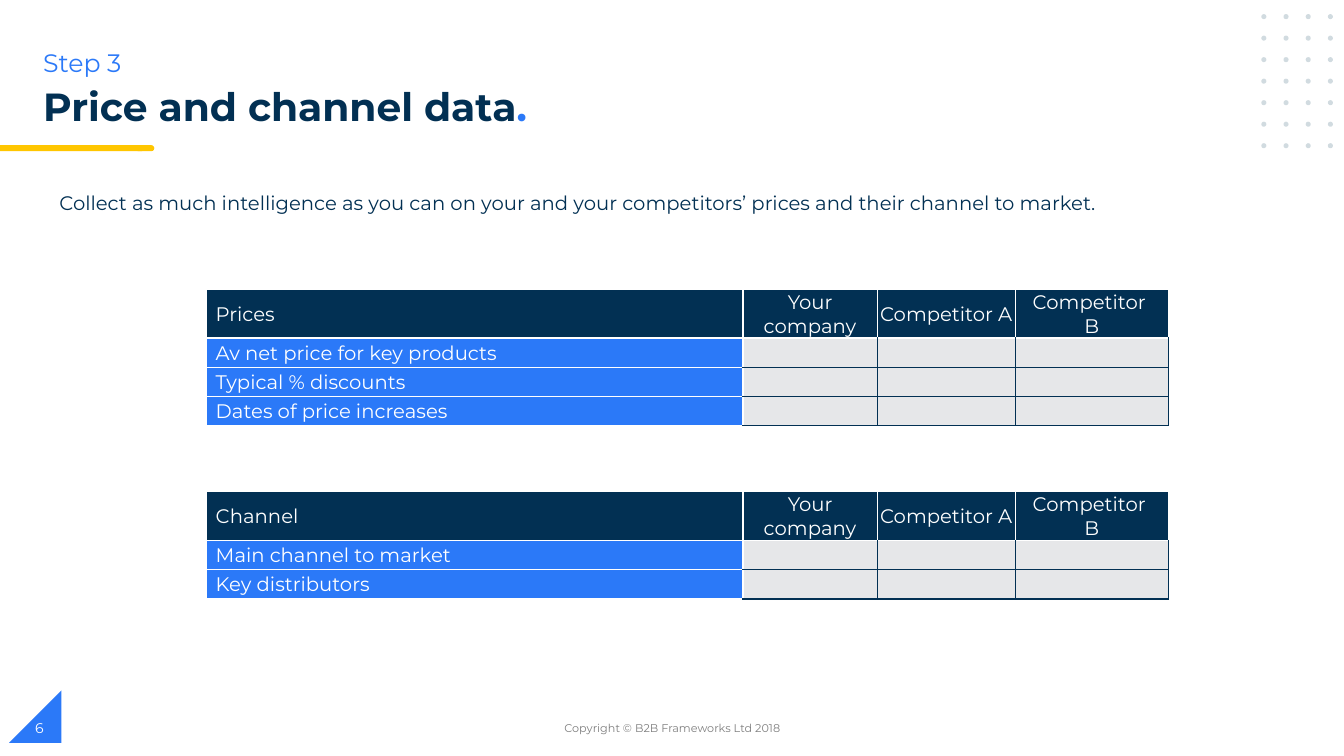
from lxml import etree
from pptx import Presentation
from pptx.dml.color import RGBColor
from pptx.enum.shapes import MSO_SHAPE
from pptx.enum.text import MSO_ANCHOR, PP_ALIGN
from pptx.oxml.ns import qn
from pptx.util import Inches, Pt

TRIANGLE = MSO_SHAPE.RIGHT_TRIANGLE
TERMINATOR = MSO_SHAPE.FLOWCHART_TERMINATOR
RECTANGLE = MSO_SHAPE.RECTANGLE
OVAL = MSO_SHAPE.OVAL
TOP, MIDDLE = MSO_ANCHOR.TOP, MSO_ANCHOR.MIDDLE
LEFT, CENTER = PP_ALIGN.LEFT, PP_ALIGN.CENTER

NAVY, BLUE, YELLOW = "023053", "2B79F8", "FFC600"
WHITE, PALE, DOT, GREY = "FFFFFF", "E6E7E9", "D1DBE0", "7F7F7F"
FONT = "Montserrat"


def rgb(color):
    return RGBColor.from_string(color)


def format_run(run, size, color, bold=False):
    for name, value in {"name": FONT, "size": Pt(size), "bold": bold}.items():
        setattr(run.font, name, value)
    run.font.color.rgb = rgb(color)


presentation = Presentation()
presentation.slide_width = Inches(13.33)
presentation.slide_height = Inches(7.5)
slide = presentation.slides.add_slide(presentation.slide_layouts[6])

# Corner triangle, title underline and dot grid
decorations = [
    (TRIANGLE, 0.09, 6.85, 0.52, 0.52, BLUE),
    (TERMINATOR, 1.34, 1.44, 0.19, 0.06, YELLOW),
    (RECTANGLE, 0, 1.44, 1.41, 0.06, YELLOW),
]
for row in range(7):
    for column in range(4):
        decorations.append((OVAL, 12.51 + 0.22 * column, 0.14 + 0.2135 * row, 0.05, 0.05, DOT))

for kind, left, top, width, height, color in decorations:
    shape = slide.shapes.add_shape(kind, Inches(left), Inches(top), Inches(width), Inches(height))
    shape.shadow.inherit = False
    shape.fill.solid()
    shape.fill.fore_color.rgb = rgb(color)
    shape.line.fill.background()
    if kind == TRIANGLE:
        shape._element.spPr.find(qn("a:xfrm")).set("flipH", "1")

# Tables: title, top, row labels
column_widths = [5.32, 1.33, 1.37, 1.52]
companies = ["Your company", "Competitor A", "Competitor \nB"]
tables = [
    ("Prices", 2.87, ["Av net price for key products", "Typical % discounts", "Dates of price increases"]),
    ("Channel", 4.88, ["Main channel to market", "Key distributors"]),
]
cell_format = {
    "vertical_anchor": MIDDLE,
    "margin_left": Inches(0.01),
    "margin_right": Inches(0.01),
    "margin_top": Inches(0.01),
    "margin_bottom": 0,
}
for title, top, labels in tables:
    row_heights = [0.47] + [0.29] * len(labels)
    frame = slide.shapes.add_table(
        len(row_heights), len(column_widths), Inches(2.05), Inches(top),
        Inches(sum(column_widths)), Inches(sum(row_heights)))
    table = frame.table
    for column, width in zip(table.columns, column_widths):
        column.width = Inches(width)
    for row, height in zip(table.rows, row_heights):
        row.height = Inches(height)

    contents = [[title] + companies] + [[label, "", "", ""] for label in labels]
    for row_index, texts in enumerate(contents):
        for column_index, text in enumerate(texts):
            cell = table.cell(row_index, column_index)
            for name, value in cell_format.items():
                setattr(cell, name, value)
            is_data = row_index > 0 and column_index > 0
            edge = NAVY if is_data else WHITE
            borders = {
                "a:lnL": WHITE if column_index == 1 else edge,
                "a:lnR": edge,
                "a:lnT": WHITE if row_index == 1 else edge,
                "a:lnB": edge,
            }
            properties = cell._tc.get_or_add_tcPr()
            for tag, color in borders.items():
                line = etree.SubElement(properties, qn(tag), w=str(Pt(1)))
                line_fill = etree.SubElement(line, qn("a:solidFill"))
                etree.SubElement(line_fill, qn("a:srgbClr"), val=color)
            cell.fill.solid()
            cell.fill.fore_color.rgb = rgb(PALE if is_data else BLUE if row_index else NAVY)

            cell.text_frame.text = text
            for paragraph in cell.text_frame.paragraphs:
                paragraph.alignment = CENTER if column_index else LEFT
                if column_index == 0:
                    paragraph._p.get_or_add_pPr().set("marL", str(Inches(0.08)))
                for run in paragraph.runs:
                    format_run(run, 14, WHITE)
                if is_data:
                    end = etree.SubElement(paragraph._p, qn("a:endParaRPr"), sz="1400")
                    etree.SubElement(end, qn("a:latin"), typeface=FONT)

# Text boxes: place, anchor, alignment, line spacing, runs of (text, size, color, bold)
text_boxes = [
    (0.49, 1.84, 10.75, 0.34, TOP, LEFT, 1.0,
     [("Collect as much intelligence as you can on your and your competitors’ prices "
       "and their channel to market.", 14, NAVY, False)]),
    (0.33, 0.82, 6.29, 0.56, TOP, LEFT, 0.9,
     [("Price and channel data", 28, NAVY, True), (".", 28, BLUE, True)]),
    (0.33, 0.42, 1.06, 0.4, TOP, LEFT, 1.0, [("Step 3", 18, BLUE, False)]),
    (4.42, 7.02, 4.5, 0.4, MIDDLE, CENTER, 1.0,
     [("Copyright © B2B Frameworks Ltd 2018", 8, GREY, False)]),
    (0.25, 7.02, 3, 0.4, MIDDLE, LEFT, 1.0, [("6", 10, WHITE, False)]),
]
for left, top, width, height, anchor, alignment, spacing, runs in text_boxes:
    box = slide.shapes.add_textbox(Inches(left), Inches(top), Inches(width), Inches(height))
    box.text_frame.word_wrap = True
    box.text_frame.vertical_anchor = anchor
    paragraph = box.text_frame.paragraphs[0]
    paragraph.alignment = alignment
    paragraph.line_spacing = spacing
    for text, size, color, bold in runs:
        run = paragraph.add_run()
        run.text = text
        format_run(run, size, color, bold)

presentation.save("out.pptx")
